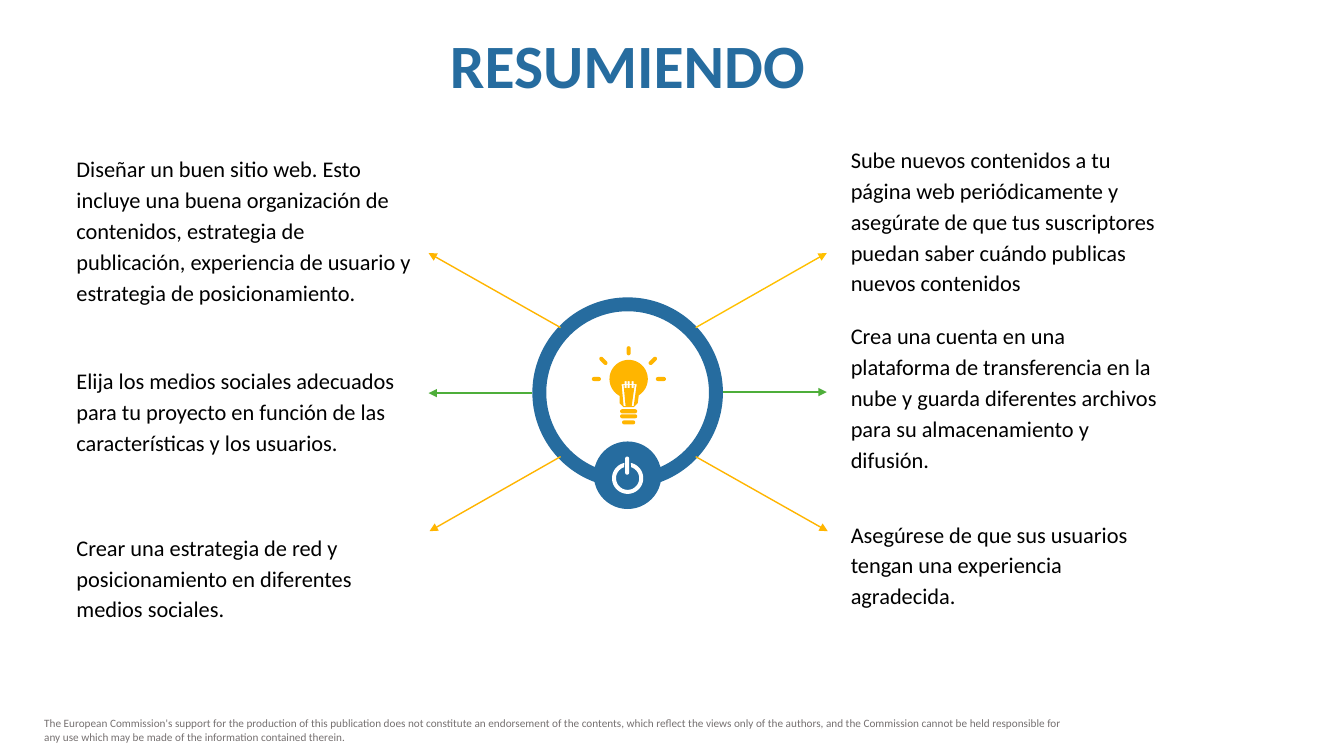
from dataclasses import dataclass
from math import cos, radians, sin
from lxml import etree
from pptx import Presentation
from pptx import util as u
from pptx.dml.color import RGBColor
from pptx.enum import shapes, text
from pptx.oxml.ns import qn

PX = u.Inches(1) // 100
FINE = 100


@dataclass(frozen=True)
class Theme:
    font: str = "Calibri"
    blue: str = "266C9F"
    amber: str = "FFB500"
    gold: str = "FFC000"
    green: str = "4EAE3A"
    white: str = "FFFFFF"
    black: str = "000000"
    grey: str = "767171"
    title_size: int = 44
    body_size: int = 16
    footer_size: int = 8


theme = Theme()
presentation = Presentation()
presentation.slide_width = 1333 * PX
presentation.slide_height = 750 * PX
slide = presentation.slides.add_slide(presentation.slide_layouts[6])


def add_text(box, words, size, color, spacing=1.0, anchor=text.MSO_ANCHOR.TOP):
    text_frame = slide.shapes.add_textbox(*(n * PX for n in box)).text_frame
    text_frame.word_wrap = True
    text_frame.vertical_anchor = anchor
    text_frame.text = words
    paragraph = text_frame.paragraphs[0]
    paragraph.line_spacing = spacing
    font = paragraph.runs[0].font
    font.name = theme.font
    font.size = u.Pt(size)
    font.color.rgb = RGBColor.from_string(color)
    return text_frame


def arc(center_x, center_y, radius, start, end, step=6):
    return [(center_x + radius * cos(radians(angle)), center_y + radius * sin(radians(angle)))
            for angle in range(start, end, step)]


footer = add_text(
    (34, 706, 1046, 37),
    "The European Commission's support for the production of this publication does not "
    "constitute an endorsement of the contents, which reflect the views only of the authors, "
    "and the Commission cannot be held responsible for any use which may be made of the "
    "information contained therein.",
    theme.footer_size, theme.grey)
footer.auto_size = text.MSO_AUTO_SIZE.SHAPE_TO_FIT_TEXT

title = add_text((286, 30, 673, 79), "RESUMIENDO", theme.title_size, theme.blue, 0.9)
title.paragraphs[0].alignment = text.PP_ALIGN.CENTER
title.paragraphs[0].runs[0].font.bold = True

ring = slide.shapes.add_shape(shapes.MSO_SHAPE.DONUT, *(n * PX for n in (528, 295, 189, 189)))
ring.adjustments[0] = 0.073
badge = slide.shapes.add_shape(shapes.MSO_SHAPE.OVAL, *(n * PX for n in (589, 438, 67, 67)))

bulb_glass = arc(623, 376, 19, 118, 423) + [(632, 400), (628, 404), (618, 404), (614, 400)]
filament = [(616, 381)]
for left, right in ((619, 621), (622, 624), (626, 628)):
    filament += [(left, 381), (left, 378), (right, 378), (right, 381)]
filament += [(631, 381), (628, 403), (626, 403), (629, 382)]
for left, right in ((626, 628), (622, 624), (619, 621)):
    filament += [(right, 382), (right, 385), (left, 385), (left, 382)]
filament += [(618, 382), (620, 403), (618, 403)]

bulb_bars = [
    (623, 408, 17, 4, 0), (623, 413, 17, 4, 0), (623, 419, 13, 4, 0),
    (591, 376, 9, 4, 0), (655, 376, 10, 4, 0), (623, 348, 9, 4, 90),
    (598, 358, 10, 4, 45), (647, 358, 10, 4, 135),
]
power_bar = (622, 462, 18, 4, 90)
capsules = []
for center_x, center_y, length, thickness, angle in bulb_bars + [power_bar]:
    reach = (length - thickness) / 2
    along_x, along_y = reach * cos(radians(angle)), reach * sin(radians(angle))
    radius = thickness / 2
    capsules.append(
        arc(center_x + along_x, center_y + along_y, radius, angle - 90, angle + 91, 30)
        + arc(center_x - along_x, center_y - along_y, radius, angle + 90, angle + 271, 30))
power_ring = arc(622.5, 474.5, 15.5, -78, 259) + arc(622.5, 474.5, 11.5, -72, 253)[::-1]

turned_bulb = [[(623.5 - (y - 382.5), 382.5 + (x - 623.5)) for x, y in outline]
               for outline in [bulb_glass, filament] + capsules[:-1]]
icons = []
for outlines in (turned_bulb, [power_ring, capsules[-1]]):
    contours = [[(x * FINE, y * FINE) for x, y in outline] for outline in outlines]
    builder = slide.shapes.build_freeform(*contours[0][0], scale=PX / FINE)
    builder.add_line_segments(contours[0][1:])
    for contour in contours[1:]:
        builder.move_to(*contour[0])
        builder.add_line_segments(contour[1:])
    icons.append(builder.convert_to_shape())
bulb, power = icons
bulb.rotation = 270

for shape, color in ((ring, theme.blue), (badge, theme.blue),
                     (bulb, theme.amber), (power, theme.white)):
    shape.shadow.inherit = False
    shape.fill.solid()
    shape.fill.fore_color.rgb = RGBColor.from_string(color)
    shape.line.fill.background()

arrows = [
    (528, 390, 425, 390, theme.green), (717, 389, 820, 389, theme.green),
    (556, 325, 425, 251, theme.amber), (690, 325, 820, 251, theme.gold),
    (690, 453, 821, 527, theme.amber), (556, 453, 426, 527, theme.amber),
]
for *ends, color in arrows:
    connector = slide.shapes.add_connector(
        shapes.MSO_CONNECTOR.STRAIGHT, *(n * PX for n in ends))
    connector.line.width = u.Pt(1)
    connector.line.color.rgb = RGBColor.from_string(color)
    properties = connector.element.spPr
    etree.SubElement(properties, qn("a:effectLst"))
    etree.SubElement(properties.find(qn("a:ln")), qn("a:tailEnd"), type="triangle")

points = [
    ((66, 145, 352, 163),
     "Diseñar un buen sitio web. Esto incluye una buena organización de contenidos, estrategia "
     "de publicación, experiencia de usuario y estrategia de posicionamiento."),
    ((66, 356, 345, 101),
     "Elija los medios sociales adecuados para tu proyecto en función de las características "
     "y los usuarios."),
    ((66, 521, 352, 101),
     "Crear una estrategia de red y posicionamiento en diferentes medios sociales."),
    ((834, 136, 330, 163),
     "Sube nuevos contenidos a tu página web periódicamente y asegúrate de que tus "
     "suscriptores puedan saber cuándo publicas nuevos contenidos"),
    ((834, 311, 330, 163),
     "Crea una cuenta en una plataforma de transferencia en la nube y guarda diferentes "
     "archivos para su almacenamiento y difusión."),
    ((834, 508, 330, 101),
     "Asegúrese de que sus usuarios tengan una experiencia agradecida."),
]
for box, words in points:
    point = add_text(box, words, theme.body_size, theme.black, 1.15, text.MSO_ANCHOR.MIDDLE)
    point.auto_size = text.MSO_AUTO_SIZE.SHAPE_TO_FIT_TEXT

presentation.save("out.pptx")
